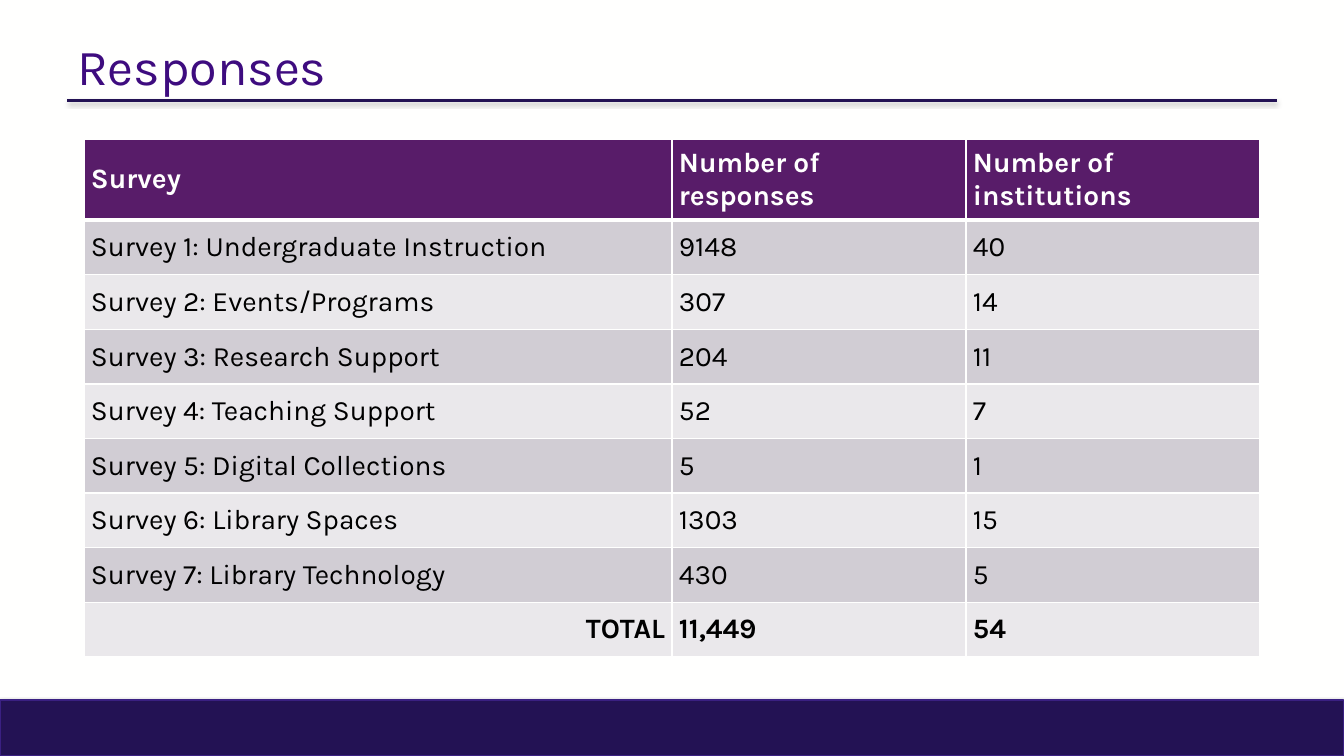
from lxml.etree import SubElement
from pptx import Presentation
from pptx.dml.color import RGBColor
from pptx.enum.shapes import MSO_CONNECTOR, MSO_SHAPE
from pptx.enum.text import MSO_ANCHOR, PP_ALIGN
from pptx.oxml import parse_xml
from pptx.oxml.ns import nsdecls, qn
from pptx.util import Pt

COLORS = {
    "background": "FFFFFE",
    "navy": "231254",
    "footer_edge": "3A2082",
    "title": "3E0C7F",
    "header": "581C69",
    "dark_band": "D1CDD4",
    "light_band": "EAE8EB",
    "text": "000000",
}
RGB = {name: RGBColor.from_string(value) for name, value in COLORS.items()}


def add_run(para, text, size, color, bold=False):
    span = para.add_run()
    span.text = text
    span.font.name = "Karla"
    span.font.size = Pt(size)
    span.font.bold = bold
    span.font.color.rgb = RGB[color]


def add_shadow(shape, distance, opacity):
    effects = parse_xml(
        f'<a:effectLst {nsdecls("a")}><a:outerShdw blurRad="{Pt(3.1)}" dist="{Pt(distance)}" '
        f'dir="5400000" rotWithShape="0"><a:srgbClr val="000000">'
        f'<a:alpha val="{opacity * 1000}"/></a:srgbClr></a:outerShdw></a:effectLst>'
    )
    shape.element.spPr.append(effects)


deck = Presentation()
deck.slide_width, deck.slide_height = Pt(960), Pt(540)
page = deck.slides.add_slide(deck.slide_layouts[6])
page.background.fill.solid()
page.background.fill.fore_color.rgb = RGB["background"]

# Footer band
footer = page.shapes.add_shape(MSO_SHAPE.RECTANGLE, Pt(0), Pt(500), Pt(960), Pt(40))
footer.fill.solid()
footer.fill.fore_color.rgb = RGB["navy"]
footer.line.color.rgb = RGB["footer_edge"]
footer.line.width = Pt(0.75)
add_shadow(footer, 1.8, 35)

# Rule under the title
rule = page.shapes.add_connector(MSO_CONNECTOR.STRAIGHT, Pt(48), Pt(72), Pt(912), Pt(72))
rule.line.color.rgb = RGB["navy"]
rule.line.width = Pt(2)
add_shadow(rule, 1.6, 38)

# Title
box = page.shapes.add_textbox(Pt(48), Pt(21.6), Pt(864), Pt(50.4))
box.text_frame.word_wrap = True
box.text_frame.vertical_anchor = MSO_ANCHOR.MIDDLE
add_run(box.text_frame.paragraphs[0], "Responses", 36, "title")

# Survey table
rows = [
    ("Survey", "Number of responses", "Number of institutions"),
    ("Survey 1: Undergraduate Instruction", "9148", "40"),
    ("Survey 2: Events/Programs", "307", "14"),
    ("Survey 3: Research Support", "204", "11"),
    ("Survey 4: Teaching Support", "52", "7"),
    ("Survey 5: Digital Collections", "5", "1"),
    ("Survey 6: Library Spaces", "1303", "15"),
    ("Survey 7: Library Technology", "430", "5"),
    ("TOTAL", "11,449", "54"),
]
last = len(rows) - 1
table = page.shapes.add_table(len(rows), 3, Pt(60), Pt(99.3), Pt(840), Pt(39 * len(rows))).table
for column, width in zip(table.columns, (420, 210, 210)):
    column.width = Pt(width)

for row_index, values in enumerate(rows):
    table.rows[row_index].height = Pt(39)
    is_header = row_index == 0
    band = "header" if is_header else "dark_band" if row_index % 2 else "light_band"
    for column_index, value in enumerate(values):
        cell = table.cell(row_index, column_index)
        cell.vertical_anchor = MSO_ANCHOR.MIDDLE
        cell.margin_left = cell.margin_right = cell.margin_top = cell.margin_bottom = Pt(5)
        para = cell.text_frame.paragraphs[0]
        if value == "TOTAL":
            para.alignment = PP_ALIGN.RIGHT
        add_run(para, value, 20, "background" if is_header else "text", row_index in (0, last))

        # Borders come before the fill, with a thick edge below the header
        for side in ("L", "R", "T", "B"):
            thick = (row_index, side) in ((0, "B"), (1, "T"))
            properties = cell._tc.get_or_add_tcPr()
            edge = SubElement(properties, qn(f"a:ln{side}"), w=str(Pt(3 if thick else 1)))
            paint = SubElement(edge, qn("a:solidFill"))
            SubElement(paint, qn("a:srgbClr"), val=COLORS["background"])
        cell.fill.solid()
        cell.fill.fore_color.rgb = RGB[band]

deck.save("out.pptx")
